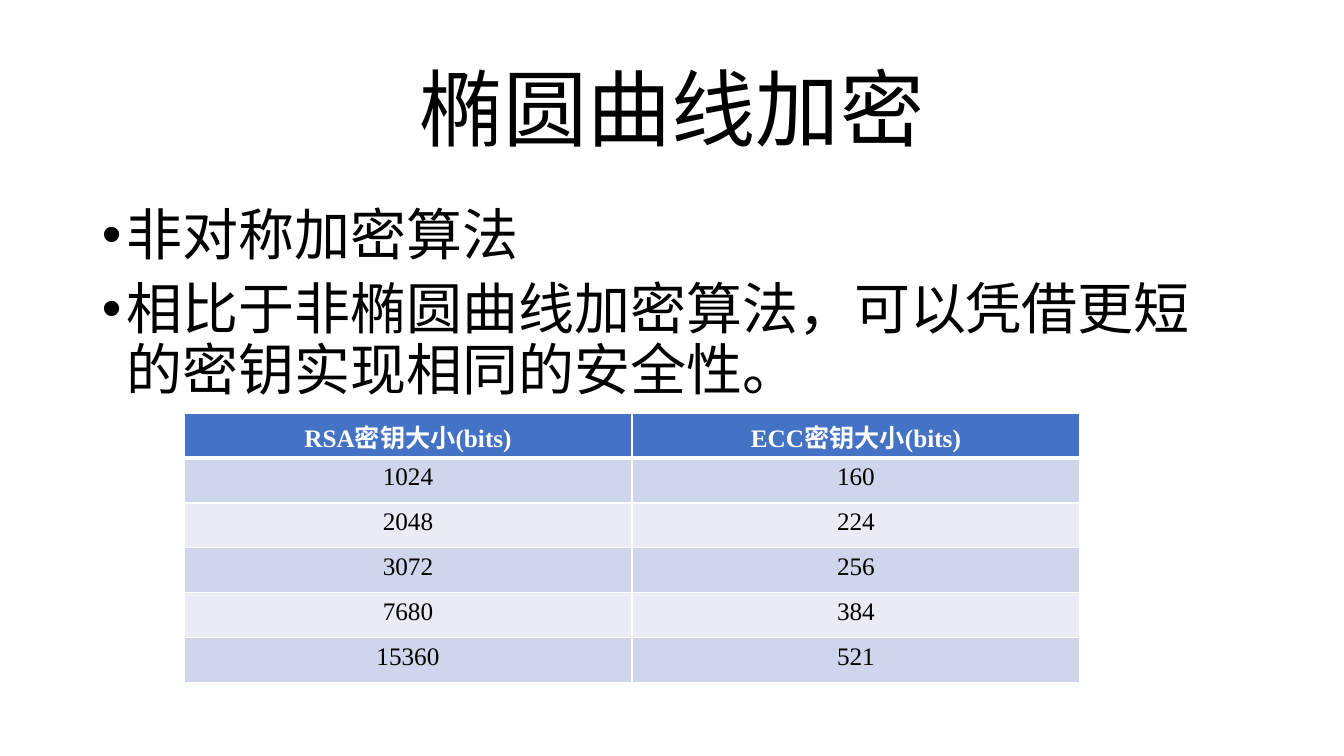
"""Build a slide comparing RSA and ECC key sizes."""
from lxml.etree import SubElement
from pptx import Presentation
from pptx.dml.color import RGBColor as RGB
from pptx.enum.text import MSO_ANCHOR as ANCHOR, PP_ALIGN as ALIGN
from pptx.oxml.ns import qn
from pptx.util import Pt

TITLE = "椭圆曲线加密"
BULLETS = [
    "非对称加密算法",
    "相比于非椭圆曲线加密算法，可以凭借更短的密钥实现相同的安全性。",
]
KEY_SIZES = [
    ("RSA密钥大小(bits)", "ECC密钥大小(bits)"),
    ("1024", "160"),
    ("2048", "224"),
    ("3072", "256"),
    ("7680", "384"),
    ("15360", "521"),
]
COLORS = {"text": "000000", "line": "FFFFFF", "header": "4472C4",
          "odd": "CFD5EA", "even": "E9EBF5"}
FONT = "Times New Roman"
SLIDE_W, SLIDE_H = 1344, 756
TITLE_BOX = (92, 40, 1160, 146)
BODY_BOX = (92, 202, 1160, 480)
TABLE_X, TABLE_Y, COL_W, ROW_H = 184, 413, 448, 45
INDENT = 25


def px(n):
    return round(n * 914400 / 100.8)


def style(p, size, color="text", bold=False):
    for r in p.runs:
        r.font.name = FONT
        r.font.size = Pt(size)
        r.font.bold = bold
        r.font.color.rgb = RGB.from_string(COLORS[color])


def add_text(slide, box, lines, size, anchor=ANCHOR.TOP):
    tf = slide.shapes.add_textbox(*map(px, box)).text_frame
    tf.word_wrap = True
    tf.vertical_anchor = anchor
    tf.text = "\n".join(lines)
    for p in tf.paragraphs:
        p.line_spacing = 0.9
        style(p, size)
    return tf


def add_bullet(p):
    p.space_before = Pt(10)
    pPr = p._p.get_or_add_pPr()
    pPr.set("marL", str(px(INDENT)))
    pPr.set("indent", str(-px(INDENT)))
    SubElement(pPr, qn("a:buFont"), typeface="Arial")
    SubElement(pPr, qn("a:buChar"), char="•")


def add_borders(cell, top, bottom):
    tcPr = cell._tc.get_or_add_tcPr()
    for side, width in (("L", 1), ("R", 1), ("T", top), ("B", bottom)):
        ln = SubElement(tcPr, qn(f"a:ln{side}"), w=str(Pt(width)))
        fill = SubElement(ln, qn("a:solidFill"))
        SubElement(fill, qn("a:srgbClr"), val=COLORS["line"])


def add_key_table(slide):
    rows, cols = len(KEY_SIZES), len(KEY_SIZES[0])
    frame = slide.shapes.add_table(rows, cols, px(TABLE_X), px(TABLE_Y),
                                   px(COL_W * cols), px(ROW_H * rows))
    for i, values in enumerate(KEY_SIZES):
        header = i == 0
        fill = "header" if header else "odd" if i % 2 else "even"
        for j, value in enumerate(values):
            cell = frame.table.cell(i, j)
            add_borders(cell, 3 if i == 1 else 1, 3 if header else 1)
            cell.fill.solid()
            cell.fill.fore_color.rgb = RGB.from_string(COLORS[fill])
            cell.text = value
            p = cell.text_frame.paragraphs[0]
            p.alignment = ALIGN.CENTER
            style(p, 18, "line" if header else "text", header)


def main():
    prs = Presentation()
    prs.slide_width, prs.slide_height = px(SLIDE_W), px(SLIDE_H)
    slide = prs.slides.add_slide(prs.slide_layouts[6])
    title = add_text(slide, TITLE_BOX, [TITLE], 60, ANCHOR.MIDDLE)
    title.paragraphs[0].alignment = ALIGN.CENTER
    for p in add_text(slide, BODY_BOX, BULLETS, 40).paragraphs:
        add_bullet(p)
    add_key_table(slide)
    prs.save("out.pptx")


if __name__ == "__main__":
    main()
